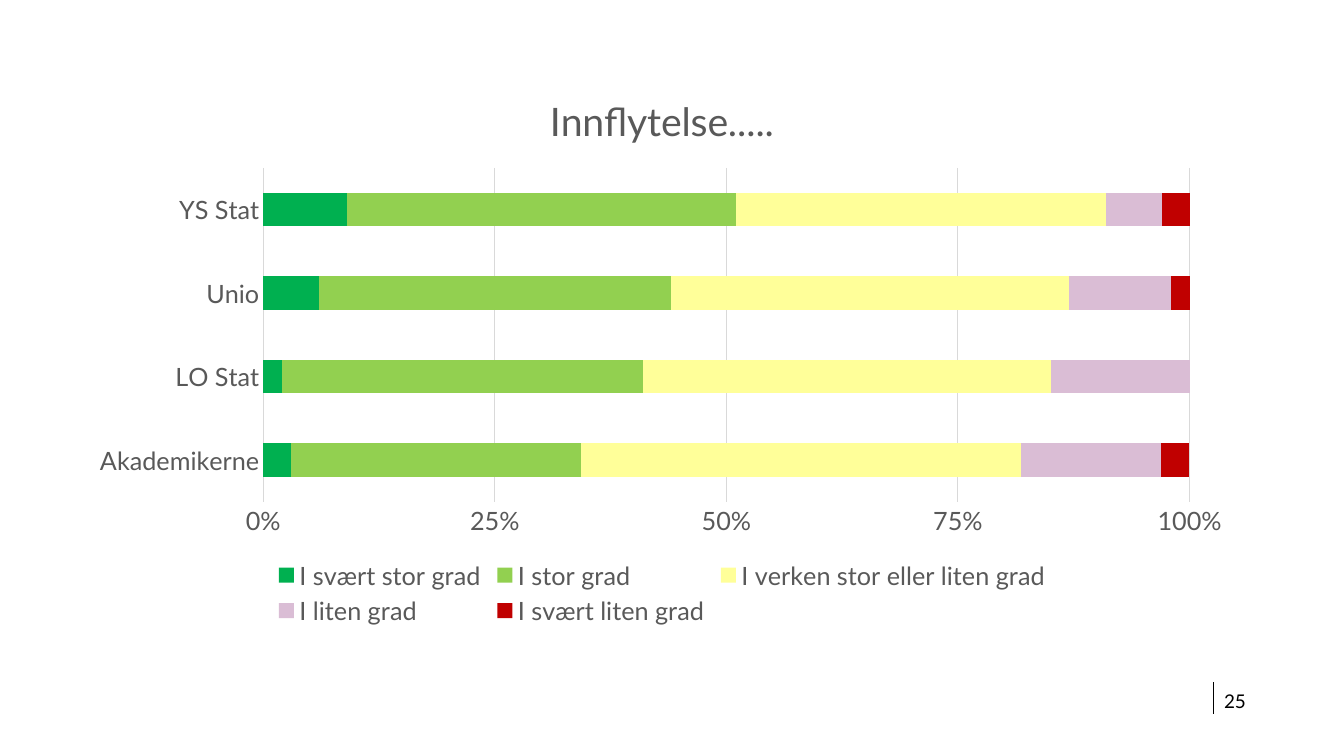
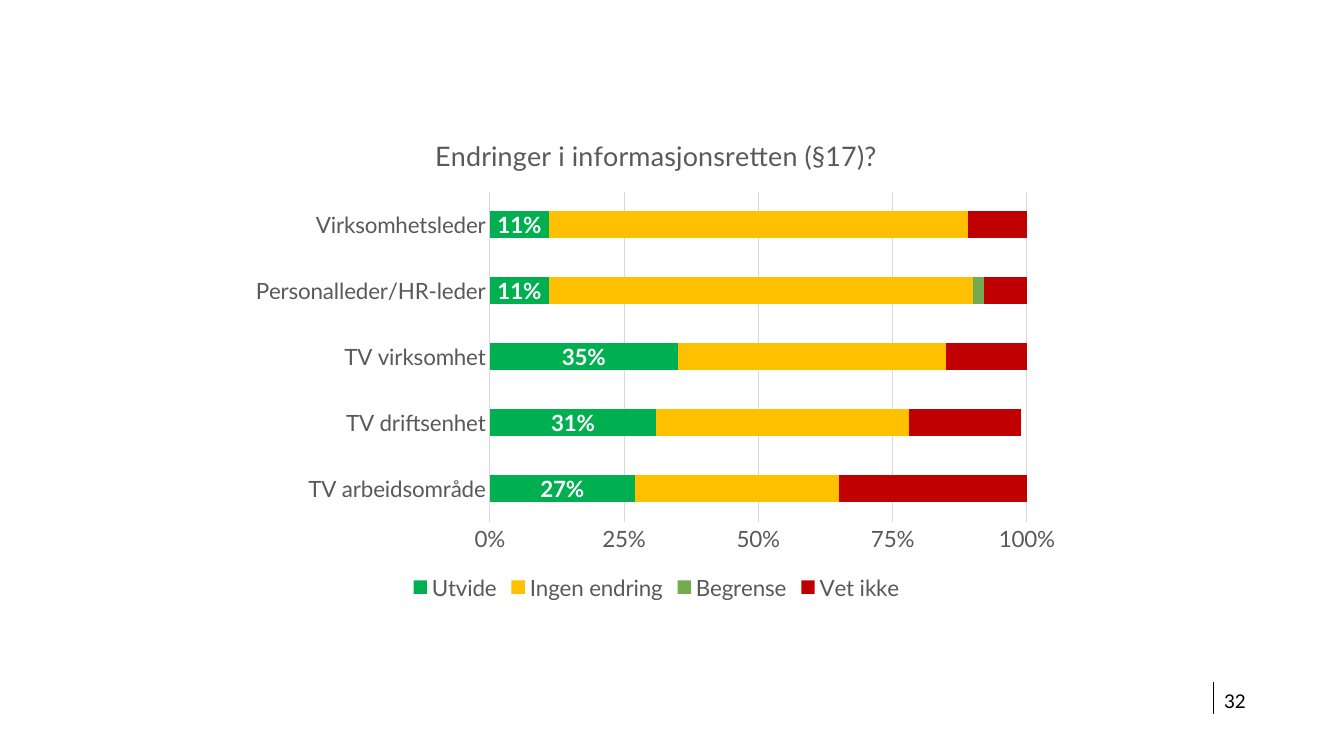
import pptx
import pptx.chart.data
import pptx.dml.color
import pptx.enum.chart
import pptx.enum.shapes
import pptx.enum.text
import pptx.oxml
import pptx.oxml.ns
import pptx.util
from pptx.util import Inches

FONT = "Lato"
BLACK = "000000"
WHITE = "FFFFFF"
GREY = "595959"
RULE = "D9D9D9"
GREEN = "00B050"
RED = "C00000"
BAR = pptx.enum.chart.XL_CHART_TYPE

INFLUENCE = {
    "kind": BAR.BAR_STACKED_100,
    "box": (0.75, 0.69, 11.63, 5.57),
    "plot": (0.16, 0.175, 0.79, 0.595),
    "title": "Innflytelse.....",
    "title_size": 28,
    "size": 18,
    "number_format": "0",
    "categories": ["Akademikerne", "LO Stat", "Unio", "YS Stat"],
    "series": [
        ("I svært stor grad", (3, 2, 6, 9), GREEN),
        ("I stor grad", (31, 39, 38, 42), "92D050"),
        ("I verken stor eller liten grad", (47, 44, 43, 40), "FFFF99"),
        ("I liten grad", (15, 15, 11, 6), "DABDD5"),
        ("I svært liten grad", (3, 0, 2, 3), RED),
    ],
}

INFORMATION = {
    "kind": BAR.BAR_STACKED,
    "box": (2.38, 1.15, 8.26, 4.85),
    "plot": (0.3, 0.155, 0.645, 0.675),
    "title": "Endringer i informasjonsretten (§17)?",
    "title_size": 19.2,
    "size": 16,
    "number_format": "0%",
    "maximum": 1,
    "labelled": ["Utvide"],
    "categories": ["TV arbeidsområde", "TV driftsenhet", "TV virksomhet",
                   "Personalleder/HR-leder", "Virksomhetsleder"],
    "series": [
        ("Utvide", (0.27, 0.31, 0.35, 0.11, 0.11), GREEN),
        ("Ingen endring", (0.38, 0.47, 0.5, 0.79, 0.78), "FFC000"),
        ("Begrense", (0, 0, 0, 0.02, 0), "74AA50"),
        ("Vet ikke", (0.35, 0.21, 0.15, 0.09, 0.11), RED),
    ],
}


def colour(value):
    return pptx.dml.color.RGBColor.from_string(value)


def style_font(font, size, value, bold=False):
    font.name = FONT
    font.size = pptx.util.Pt(size)
    font.bold = bold
    font.color.rgb = colour(value)


def style_line(line, value):
    line.width = pptx.util.Pt(0.75)
    line.color.rgb = colour(value)


def add_page_number(page, number, left=12.04, top=6.77):
    rule = page.shapes.add_connector(
        pptx.enum.shapes.MSO_CONNECTOR.STRAIGHT,
        Inches(left), Inches(top), Inches(left), Inches(top + 0.31))
    style_line(rule.line, BLACK)
    rule.element.spPr.append(pptx.oxml.parse_xml(
        f'<a:effectLst {pptx.oxml.ns.nsdecls("a")}/>'))

    box = page.shapes.add_textbox(
        Inches(left + 0.1), Inches(top + 0.09), Inches(1.35), Inches(0.19))
    frame = box.text_frame
    frame.word_wrap = True
    frame.vertical_anchor = pptx.enum.text.MSO_ANCHOR.MIDDLE
    frame.margin_left = frame.margin_right = 0
    frame.margin_top = frame.margin_bottom = 0
    span = frame.paragraphs[0].add_run()
    span.text = str(number)
    style_font(span.font, 13.5, BLACK)


def place_plot(chart, fractions):
    area = chart.element.find(".//" + pptx.oxml.ns.qn("c:plotArea"))
    for layout in area.findall(pptx.oxml.ns.qn("c:layout")):
        area.remove(layout)
    sizes = "".join(f'<c:{name} val="{value}"/>'
                    for name, value in zip("xywh", fractions))
    area.insert(0, pptx.oxml.parse_xml(
        f'<c:layout {pptx.oxml.ns.nsdecls("c")}><c:manualLayout>'
        '<c:layoutTarget val="inner"/>'
        '<c:xMode val="edge"/><c:yMode val="edge"/>'
        f'{sizes}</c:manualLayout></c:layout>'))


def style_axes(chart, size, maximum):
    for axis in (chart.category_axis, chart.value_axis):
        axis.major_tick_mark = pptx.enum.chart.XL_TICK_MARK.NONE
        axis.minor_tick_mark = pptx.enum.chart.XL_TICK_MARK.NONE
        style_font(axis.tick_labels.font, size, GREY)
    style_line(chart.category_axis.format.line, RULE)
    values = chart.value_axis
    values.format.line.fill.background()
    values.major_unit = 0.25
    values.has_major_gridlines = True
    style_line(values.major_gridlines.format.line, RULE)
    values.tick_labels.number_format = "0%"
    values.tick_labels.number_format_is_linked = False
    if maximum:
        values.minimum_scale = 0
        values.maximum_scale = maximum


def style_series(plot, content):
    plot.gap_width = 150
    plot.overlap = 100
    plot.vary_by_categories = False
    for series, (name, _, fill) in zip(plot.series, content["series"]):
        series.format.fill.solid()
        series.format.fill.fore_color.rgb = colour(fill)
        series.invert_if_negative = False
        if name in content.get("labelled", []):
            labels = series.data_labels
            labels.show_value = True
            labels.number_format = "0%"
            labels.number_format_is_linked = False
            style_font(labels.font, content["size"], WHITE, bold=True)


def add_bar_chart(page, content):
    table = pptx.chart.data.CategoryChartData(
        number_format=content["number_format"])
    table.categories = content["categories"]
    for name, values, _ in content["series"]:
        table.add_series(name, values)
    chart = page.shapes.add_chart(
        content["kind"], *map(Inches, content["box"]), table).chart
    style_font(chart.font, content["size"], GREY)

    chart.has_title = True
    span = chart.chart_title.text_frame.paragraphs[0].add_run()
    span.text = content["title"]
    style_font(span.font, content["title_size"], GREY)

    chart.has_legend = True
    chart.legend.position = pptx.enum.chart.XL_LEGEND_POSITION.BOTTOM
    chart.legend.include_in_layout = False
    style_font(chart.legend.font, content["size"], GREY)

    style_axes(chart, content["size"], content.get("maximum"))
    style_series(chart.plots[0], content)
    place_plot(chart, content["plot"])


def main():
    deck = pptx.Presentation()
    deck.slide_width = Inches(13.33)
    deck.slide_height = Inches(7.5)
    for number, content in ((25, INFLUENCE), (32, INFORMATION)):
        page = deck.slides.add_slide(deck.slide_layouts[6])
        add_page_number(page, number)
        add_bar_chart(page, content)
    deck.save("out.pptx")


if __name__ == "__main__":
    main()
